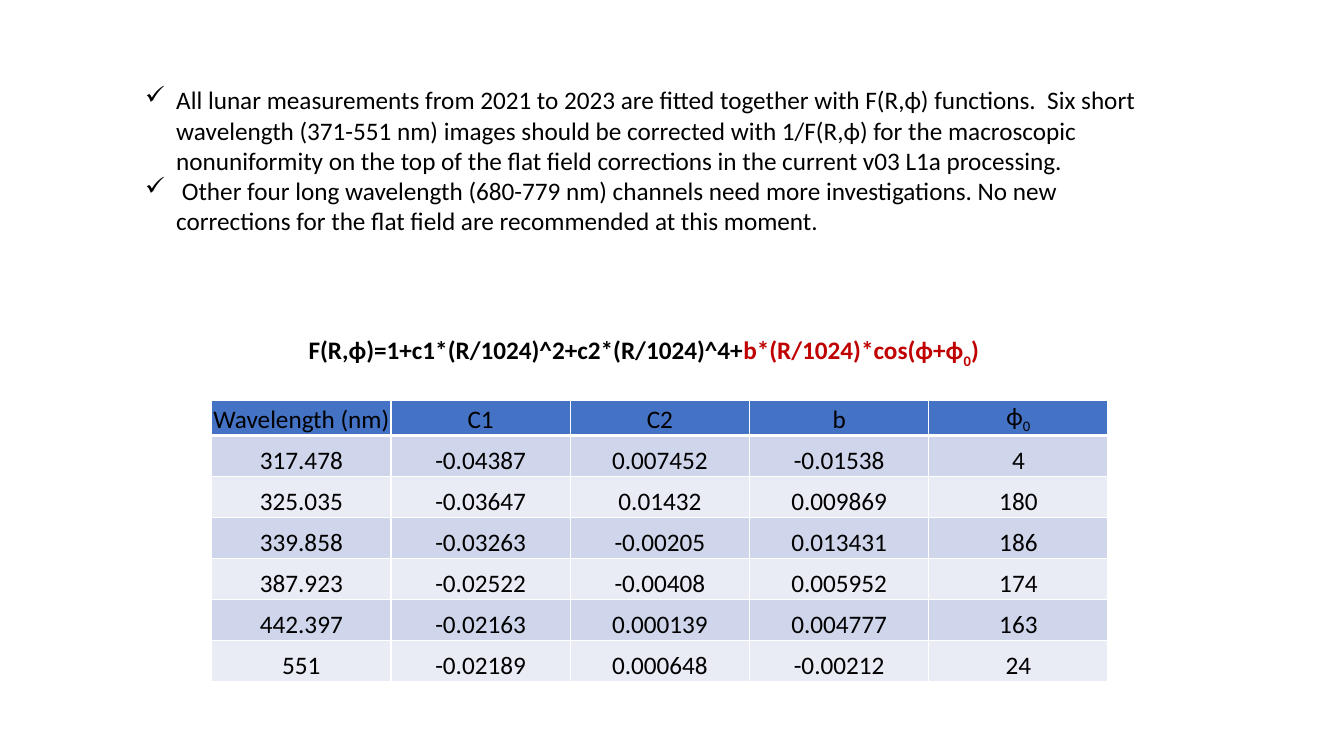
from pptx import Presentation
from pptx.dml.color import RGBColor
from pptx.enum.text import MSO_ANCHOR as Anchor, PP_ALIGN as Align
from pptx.oxml import parse_xml
from pptx.oxml.ns import nsdecls
from pptx.util import Inches, Pt

NOTES = [
    "All lunar measurements from 2021 to 2023 are fitted together with F(R,ϕ) functions.  "
    "Six short wavelength (371-551 nm) images should be corrected with 1/F(R,ϕ) for the "
    "macroscopic nonuniformity on the top of the flat field corrections in the current "
    "v03 L1a processing.",
    " Other four long wavelength (680-779 nm) channels need more investigations. "
    "No new corrections for the flat field are recommended at this moment.",
]
BLACK, RED, WHITE = "000000", "C00000", "FFFFFF"
HEAD, BANDS = "4472C4", ("E9EBF5", "CFD5EA")
# Each run: text, colour, subscript
FORMULA = [
    ("F(R,ϕ)=1+c1*(R/1024)^2+c2*(R/1024)^4+", BLACK, False),
    ("b*(R/1024)*cos(ϕ+ϕ", RED, False),
    ("0", RED, True),
    (")", RED, False),
]
ROWS = [
    ("Wavelength (nm)", "C1", "C2", "b", "ϕ0"),
    ("317.478", "-0.04387", "0.007452", "-0.01538", "4"),
    ("325.035", "-0.03647", "0.01432", "0.009869", "180"),
    ("339.858", "-0.03263", "-0.00205", "0.013431", "186"),
    ("387.923", "-0.02522", "-0.00408", "0.005952", "174"),
    ("442.397", "-0.02163", "0.000139", "0.004777", "163"),
    ("551", "-0.02189", "0.000648", "-0.00212", "24"),
]
NOTE_BOX = (1.34, 0.79, 10.4, 2.52)
FORMULA_BOX = (1.72, 3.27, 9.33, 0.4)
GRID_BOX = (2.1, 3.97, 8.89, 2.78)
HEAD_H = 0.34
INSETS = {"margin_left": 0.01, "margin_right": 0.01, "margin_top": 0.01, "margin_bottom": 0}


def color(code):
    return RGBColor.from_string(code)


def add_run(par, text, code=BLACK, bold=False, sub=False):
    run = par.add_run()
    run.text = text
    for key, val in {"name": "Calibri", "size": Pt(18), "bold": bold}.items():
        setattr(run.font, key, val)
    run.font.color.rgb = color(code)
    if sub:
        run.font._element.set("baseline", "-25000")


def add_box(slide, box):
    frame = slide.shapes.add_textbox(*map(Inches, box)).text_frame
    frame.word_wrap = True
    return frame


def add_notes(slide):
    frame = add_box(slide, NOTE_BOX)
    for i, note in enumerate(NOTES):
        par = frame.add_paragraph() if i else frame.paragraphs[0]
        add_run(par, note)
        props = par._p.get_or_add_pPr()
        props.set("marL", str(Inches(0.31)))
        props.set("indent", str(-Inches(0.31)))
        props.append(parse_xml(f'<a:buChar {nsdecls("a")} char="✓"/>'))


def add_formula(slide):
    par = add_box(slide, FORMULA_BOX).paragraphs[0]
    par.alignment = Align.CENTER
    for text, code, sub in FORMULA:
        add_run(par, text, code, True, sub)


def set_edges(cell, widths):
    """Draw white cell borders; widths maps side letter to points."""
    props = cell._tc.get_or_add_tcPr()
    for i, (side, width) in enumerate(widths.items()):
        props.insert(i, parse_xml(
            f'<a:ln{side} {nsdecls("a")} w="{Pt(width)}"><a:solidFill>'
            f'<a:srgbClr val="{WHITE}"/></a:solidFill></a:ln{side}>'))


def add_grid(slide):
    grid = slide.shapes.add_table(len(ROWS), len(ROWS[0]), *map(Inches, GRID_BOX)).table
    body_h = (GRID_BOX[3] - HEAD_H) / (len(ROWS) - 1)
    for r, row in enumerate(ROWS):
        grid.rows[r].height = Inches(body_h if r else HEAD_H)
        for c, text in enumerate(row):
            cell = grid.cell(r, c)
            for key, val in INSETS.items():
                setattr(cell, key, Inches(val))
            cell.vertical_anchor = Anchor.BOTTOM
            cell.fill.solid()
            cell.fill.fore_color.rgb = color(BANDS[r % 2] if r else HEAD)
            set_edges(cell, {"L": 1, "R": 1, "T": 3 if r == 1 else 1, "B": 1 if r else 3})
            par = cell.text_frame.paragraphs[0]
            par.alignment = Align.CENTER
            if text == "ϕ0":
                add_run(par, "ϕ")
                add_run(par, "0", sub=True)
            else:
                add_run(par, text)


def main():
    deck = Presentation()
    deck.slide_width, deck.slide_height = Inches(13.33), Inches(7.5)
    slide = deck.slides.add_slide(deck.slide_layouts[6])
    add_notes(slide)
    add_grid(slide)
    add_formula(slide)
    deck.save("out.pptx")


if __name__ == "__main__":
    main()
